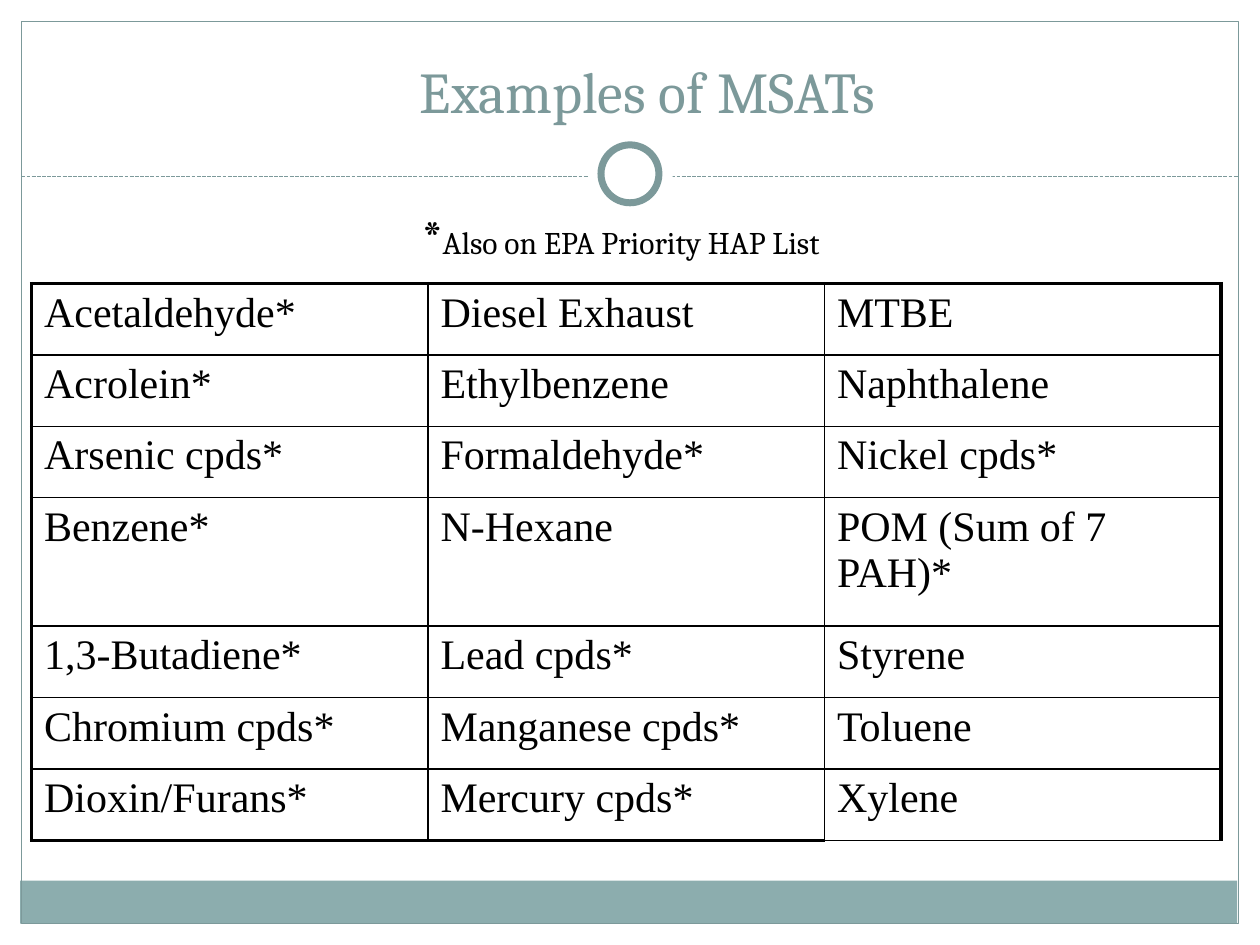
from lxml.etree import SubElement
from pptx import Presentation
from pptx.dml.color import RGBColor
from pptx.enum.dml import MSO_LINE
from pptx.enum.shapes import MSO_CONNECTOR, MSO_SHAPE
from pptx.enum.text import MSO_ANCHOR, PP_ALIGN
from pptx.oxml.ns import qn
from pptx.util import Inches, Pt

WHITE, BLACK, TEAL, PALE_TEAL = "FFFFFF", "000000", "7C999A", "8CADAE"
THIN, THICK = 1, 2.25

CHEMICALS = [
    ("Acetaldehyde*", "Diesel Exhaust", "MTBE"),
    ("Acrolein*", "Ethylbenzene", "Naphthalene"),
    ("Arsenic cpds*", "Formaldehyde*", "Nickel cpds*"),
    ("Benzene*", "N-Hexane", "POM (Sum of 7 PAH)*"),
    ("1,3-Butadiene*", "Lead cpds*", "Styrene"),
    ("Chromium cpds*", "Manganese cpds*", "Toluene"),
    ("Dioxin/Furans*", "Mercury cpds*", "Xylene"),
]


def color(value):
    return RGBColor.from_string(value)


class SlideBuilder:
    heading_font = "Cambria"
    table_font = "Times New Roman"

    def __init__(self, slide):
        self.slide = slide

    def shape(self, kind, left, top, width, height, fill=None, line=None, weight=0.75):
        shape = self.slide.shapes.add_shape(
            kind, Inches(left), Inches(top), Inches(width), Inches(height))
        shape.shadow.inherit = False
        if fill:
            shape.fill.solid()
            shape.fill.fore_color.rgb = color(fill)
        else:
            shape.fill.background()
        if line:
            shape.line.color.rgb = color(line)
            shape.line.width = Pt(weight)
        else:
            shape.line.fill.background()

    def dashed_line(self, left, right, top):
        line = self.slide.shapes.add_connector(
            MSO_CONNECTOR.STRAIGHT, Inches(left), Inches(top), Inches(right), Inches(top))
        line.line.color.rgb = color(TEAL)
        line.line.width = Pt(0.75)
        line.line.dash_style = MSO_LINE.SQUARE_DOT
        SubElement(line._element.spPr, qn("a:effectLst"))

    def text(self, left, top, width, height, spans, text_color, wrap=True):
        box = self.slide.shapes.add_textbox(
            Inches(left), Inches(top), Inches(width), Inches(height))
        frame = box.text_frame
        frame.word_wrap = wrap
        para = frame.paragraphs[0]
        para.font.name = self.heading_font
        para.font.color.rgb = color(text_color)
        for words, size in spans:
            span = para.add_run()
            span.text = words
            span.font.size = Pt(size)
        return frame

    def cell(self, cell, words, borders):
        cell.text = words
        para = cell.text_frame.paragraphs[0]
        para.font.name = self.table_font
        para.font.size = Pt(24)
        para.font.color.rgb = color(BLACK)
        properties = cell._tc.get_or_add_tcPr()
        for side, weight in borders.items():
            line = SubElement(properties, qn(f"a:ln{side}"), w=str(Pt(weight)))
            fill = SubElement(line, qn("a:solidFill"))
            SubElement(fill, qn("a:srgbClr"), val=BLACK)
        cell.fill.solid()
        cell.fill.fore_color.rgb = color(WHITE)

    def table(self, left, top, width, height, rows, tall_row, tall_height):
        last_row, last_column = len(rows) - 1, len(rows[0]) - 1
        table = self.slide.shapes.add_table(
            len(rows), len(rows[0]), Inches(left), Inches(top),
            Inches(width), Inches(height)).table
        table.first_row = table.horz_banding = False
        for column in table.columns:
            column.width = Inches(width / len(rows[0]))
        for r, words in enumerate(rows):
            row_height = tall_height if r == tall_row else (height - tall_height) / last_row
            table.rows[r].height = Inches(row_height)
            for c, word in enumerate(words):
                # The last column keeps a thin bottom edge
                heavy = {"L": c == 0, "R": c == last_column, "T": r == 0,
                         "B": r == last_row and c < last_column}
                borders = {side: THICK if thick else THIN for side, thick in heavy.items()}
                self.cell(table.cell(r, c), word, borders)


def main():
    deck = Presentation()
    deck.slide_width, deck.slide_height = Inches(10), Inches(7.5)
    page = SlideBuilder(deck.slides.add_slide(deck.slide_layouts[6]))

    # White margins, footer band and frame
    page.shape(MSO_SHAPE.RECTANGLE, 0, 0, 10, 1.52, WHITE)
    for left in (0, 9.83):
        page.shape(MSO_SHAPE.RECTANGLE, left, 0, 0.17, 7.5, WHITE)
    page.shape(MSO_SHAPE.RECTANGLE, 0.16, 6.99, 9.66, 0.34, PALE_TEAL)
    page.shape(MSO_SHAPE.RECTANGLE, 0.17, 0.17, 9.66, 7.16, line=TEAL)

    # Divider with ring
    page.dashed_line(0.17, 9.83, 1.4)
    page.shape(MSO_SHAPE.OVAL, 4.67, 1.05, 0.67, 0.67, WHITE)
    page.shape(MSO_SHAPE.OVAL, 4.77, 1.15, 0.46, 0.46, WHITE, TEAL, 4)

    # Title
    title = page.text(0.28, 0.15, 9.72, 1.26, [("Examples of MSATs", 33)], TEAL)
    title.vertical_anchor = MSO_ANCHOR.BOTTOM
    title.margin_bottom = Inches(0.42)
    title.paragraphs[0].alignment = PP_ALIGN.CENTER

    # Chemicals and footnote
    page.table(0.25, 2.25, 9.44, 4.42, CHEMICALS, tall_row=3, tall_height=1.02)
    page.text(3.25, 1.58, 3.77, 0.57,
              [("*", 28), ("Also on EPA Priority HAP List", 18)], BLACK, wrap=False)

    deck.save("out.pptx")


if __name__ == "__main__":
    main()
